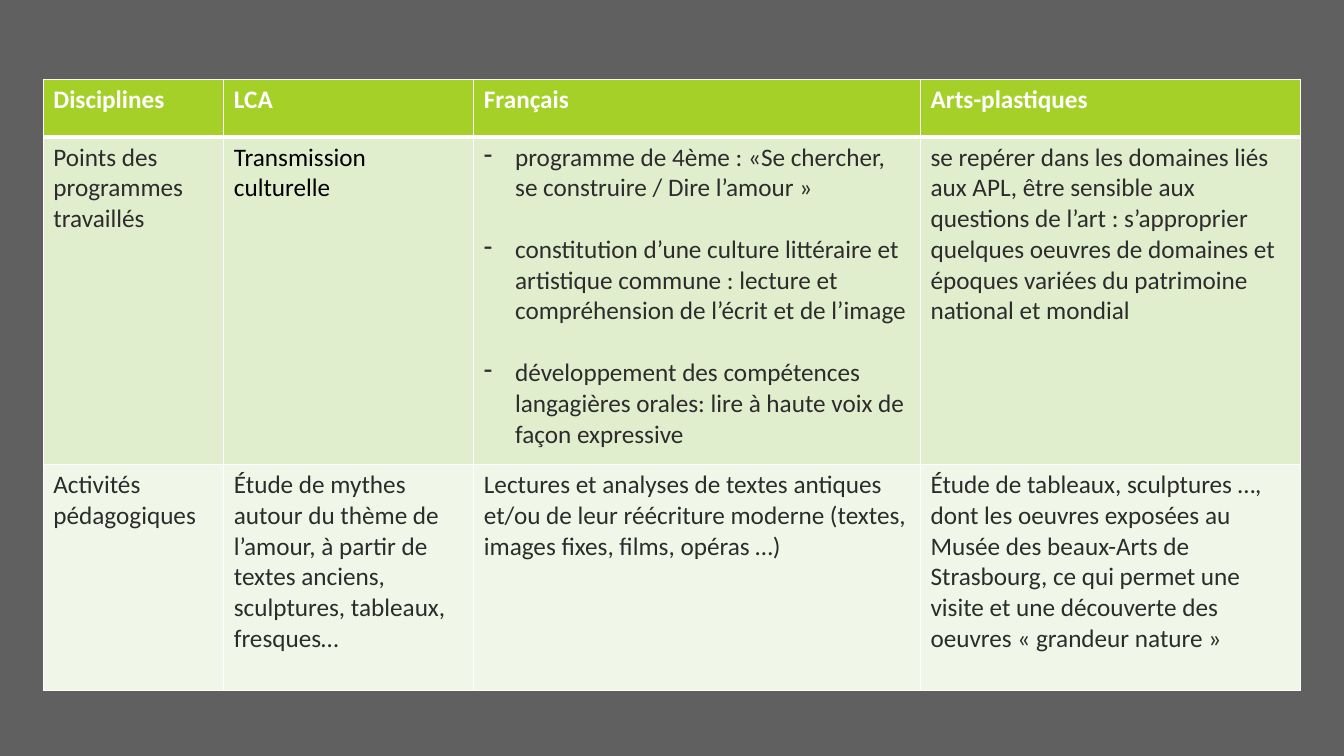
from dataclasses import dataclass

from lxml import etree
from pptx import Presentation
from pptx.dml.color import RGBColor
from pptx.oxml.ns import qn
from pptx.util import Inches, Pt

BLANK_LAYOUT = 6
COLUMN_WIDTHS = [1.79, 2.48, 4.43, 3.77]
ROW_HEIGHTS = [0.57, 3.25, 2.24]
TABLE_ROWS = [
    ["Disciplines", "LCA", "Français", "Arts-plastiques"],
    [
        "Points des programmes travaillés",
        "Transmission culturelle",
        [
            "programme de 4ème : «Se chercher, se construire / Dire l’amour »",
            "constitution d’une culture littéraire et artistique commune : "
            "lecture et compréhension de l’écrit et de l’image",
            "développement des compétences langagières orales: "
            "lire à haute voix de façon expressive",
        ],
        "se repérer dans les domaines liés aux APL, être sensible aux questions de l’art : "
        "s’approprier quelques oeuvres de domaines et époques variées du patrimoine "
        "national et mondial",
    ],
    [
        "Activités pédagogiques",
        "Étude de mythes autour du thème de l’amour, à partir de textes anciens, "
        "sculptures, tableaux, fresques…",
        "Lectures et analyses de textes antiques et/ou de leur réécriture moderne "
        "(textes, images fixes, films, opéras …)",
        "Étude de tableaux, sculptures …, dont les oeuvres exposées au Musée des "
        "beaux-Arts de Strasbourg, ce qui permet une visite et une découverte des "
        "oeuvres « grandeur nature »",
    ],
]


@dataclass(frozen=True)
class Theme:
    background: str = "606060"
    row_fills: tuple = ("A5D028", "E1EECD", "F0F7E8")
    border: str = "FFFFFF"
    header_text: str = "FFFFFF"
    body_text: str = "2C2C2C"
    emphasis_text: str = "000000"
    font: str = "Calibri"
    text_size: int = 18
    bullet_gap: int = 22
    thin_line: int = 1
    header_line: int = 3


class SlideBuilder:
    def __init__(self, slide, theme):
        self.slide = slide
        self.theme = theme

    def background(self):
        fill = self.slide.background.fill
        fill.solid()
        fill.fore_color.rgb = RGBColor.from_string(self.theme.background)

    def table(self, rows, left, top, column_widths, row_heights):
        frame = self.slide.shapes.add_table(
            len(rows), len(column_widths), Inches(left), Inches(top),
            Inches(sum(column_widths)), Inches(sum(row_heights)),
        )
        table = frame.table
        table.horz_banding = False
        for column, width in zip(table.columns, column_widths):
            column.width = Inches(width)
        for row, height in zip(table.rows, row_heights):
            row.height = Inches(height)
        for row_index, contents in enumerate(rows):
            for column_index, content in enumerate(contents):
                cell = table.cell(row_index, column_index)
                self.borders(cell, row_index)
                cell.fill.solid()
                cell.fill.fore_color.rgb = RGBColor.from_string(self.theme.row_fills[row_index])
                color = self.theme.header_text if row_index == 0 else self.theme.body_text
                if (row_index, column_index) == (1, 1):
                    color = self.theme.emphasis_text
                self.cell_text(cell, content, color, row_index == 0)

    def borders(self, cell, row_index):
        properties = cell._tc.get_or_add_tcPr()
        heavy_side = {0: "lnB", 1: "lnT"}.get(row_index)
        for side in ("lnL", "lnR", "lnT", "lnB"):
            width = self.theme.header_line if side == heavy_side else self.theme.thin_line
            line = etree.SubElement(properties, qn(f"a:{side}"), w=str(Pt(width)))
            fill = etree.SubElement(line, qn("a:solidFill"))
            etree.SubElement(fill, qn("a:srgbClr"), val=self.theme.border)

    def cell_text(self, cell, content, color, bold):
        bulleted = isinstance(content, list)
        text_frame = cell.text_frame
        text_frame.text = "\n".join(content) if bulleted else content
        for index, paragraph in enumerate(text_frame.paragraphs):
            if bulleted:
                self.bullet(paragraph)
                paragraph.space_before = Pt(self.theme.bullet_gap if index else 0)
            font = paragraph.font
            font.name = self.theme.font
            font.size = Pt(self.theme.text_size)
            font.bold = bold
            font.color.rgb = RGBColor.from_string(color)

    def bullet(self, paragraph):
        properties = paragraph._p.get_or_add_pPr()
        properties.set("marL", str(Inches(0.31)))
        properties.set("indent", str(-Inches(0.31)))
        etree.SubElement(properties, qn("a:buChar"), char="-")


def main():
    presentation = Presentation()
    presentation.slide_width = Inches(13.33)
    presentation.slide_height = Inches(7.5)
    slide = presentation.slides.add_slide(presentation.slide_layouts[BLANK_LAYOUT])
    builder = SlideBuilder(slide, Theme())
    builder.background()
    builder.table(TABLE_ROWS, 0.43, 0.79, COLUMN_WIDTHS, ROW_HEIGHTS)
    presentation.save("out.pptx")


if __name__ == "__main__":
    main()
